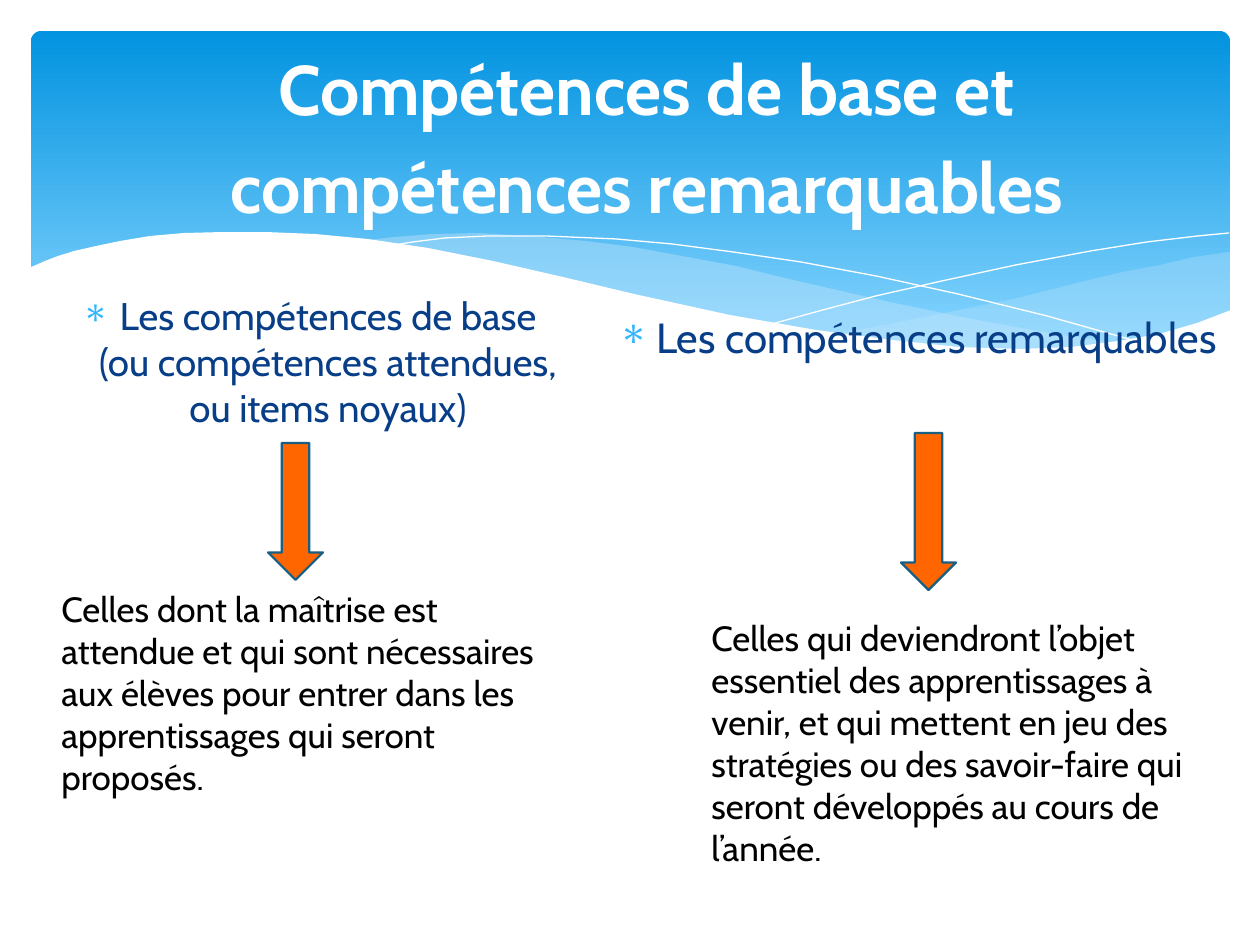
from dataclasses import dataclass
from typing import Optional

import pptx
import pptx.dml.color
import pptx.enum.shapes
import pptx.enum.text
import pptx.oxml.ns
import pptx.util
from lxml import etree

PX = 914400 / 126
FONT = "Cabin"
COLORS = {
    "sky": "0293E0", "pale": "83D3FE", "mist": "C6E7FC", "white": "FFFFFF",
    "navy": "073E87", "star": "31B6FD", "black": "000000",
    "orange": "FF6600", "edge": "195F84",
}
LEFT = pptx.enum.text.PP_ALIGN.LEFT
CENTER = pptx.enum.text.PP_ALIGN.CENTER


@dataclass
class Wave:
    points: list
    fill: Optional[str] = None
    alpha: int = 100


@dataclass
class Note:
    box: tuple
    lines: list
    size: int
    color: str
    align: int = LEFT
    bold: bool = False
    star: bool = False
    gap: float = 0


WAVES = [
    Wave([(1229, 252), (1194, 257), (1160, 265), (1123, 272), (1085, 281),
          (1014, 299), (949, 312), (890, 324), (833, 334), (871, 339),
          (922, 345), (969, 349), (1026, 350), (1076, 348), (1120, 343),
          (1160, 334), (1196, 324), (1230, 311), (1230, 252)], "mist", 29),
    Wave([(1125, 344), (1055, 334), (977, 320), (890, 302), (793, 280),
          (736, 266), (682, 256), (633, 247), (586, 241), (529, 236),
          (479, 233), (433, 234), (394, 237), (360, 241), (407, 247),
          (456, 256), (509, 266), (566, 280), (668, 302), (757, 321),
          (819, 333), (876, 340), (927, 347), (989, 350), (1043, 350),
          (1092, 348)], "mist", 40),
    Wave([(389, 246), (413, 242), (445, 238), (488, 236), (546, 236),
          (616, 239), (672, 244), (733, 252), (801, 262), (876, 276),
          (958, 294), (1047, 316), (1143, 343)]),
    Wave([(772, 324), (823, 310), (876, 296), (942, 281), (1016, 265),
          (1091, 251), (1147, 242), (1198, 236), (1229, 233)]),
    Wave([(1231, 310), (1197, 323), (1159, 334), (1118, 341), (1071, 347),
          (1019, 349), (959, 347), (892, 340), (816, 330), (730, 315),
          (634, 294), (563, 277), (493, 261), (428, 248), (368, 239),
          (315, 234), (266, 232), (223, 232), (184, 233), (150, 236),
          (120, 241), (96, 246), (74, 251), (58, 256), (45, 261),
          (29, 268), (29, 415), (1231, 415)], "white"),
]

ARROWS = [(268, 443, 55, 137), (901, 433, 55, 157)]

NOTES = [
    Note((44, 286, 530, 178),
         ["Les compétences de base (ou compétences attendues, ou items noyaux)"],
         22, "navy", CENTER, star=True, gap=4.4),
    Note((606, 305, 635, 98), ["Les compétences remarquables"],
         24, "navy", star=True, gap=4.8),
    Note((699, 610, 501, 305),
         ["Celles qui deviendront l’objet essentiel des apprentissages à venir, "
          "et qui mettent en jeu des stratégies ou des savoir-faire qui seront "
          "développés au cours de l’année."], 20, "black"),
    Note((49, 581, 541, 263),
         ["Celles dont la maîtrise est attendue et qui sont nécessaires aux "
          "élèves pour entrer dans les apprentissages qui seront proposés."],
         20, "black"),
    Note((77, 39, 1139, 217),
         ["Compétences de base et", "compétences remarquables"],
         40, "white", CENTER, bold=True, gap=8),
]


def px(n: float) -> int:
    return round(n * PX)


def rgb(name: str) -> pptx.dml.color.RGBColor:
    return pptx.dml.color.RGBColor.from_string(COLORS[name])


def tag(parent, name: str, **attrs):
    return etree.SubElement(parent, pptx.oxml.ns.qn(name), attrs)


def style(thing, values: dict) -> None:
    for key, value in values.items():
        setattr(thing, key, value)


def paint(shape, fill: Optional[str], line: Optional[str], width: float = 0) -> None:
    shape.shadow.inherit = False
    for part, color in ((shape.fill, fill), (shape.line.fill, line)):
        if color:
            part.solid()
            part.fore_color.rgb = rgb(color)
        else:
            part.background()
    if line:
        shape.line.width = pptx.util.Pt(width)


def draw_band(slide) -> None:
    kind = pptx.enum.shapes.MSO_SHAPE.ROUNDED_RECTANGLE
    band = slide.shapes.add_shape(kind, *map(px, (31, 31, 1199, 340)))
    band.adjustments[0] = 0.03
    paint(band, None, None)
    band.fill.gradient()
    band.fill.gradient_angle = 270
    stops = zip(band.fill.gradient_stops, ((0, "sky"), (0.9, "pale")))
    for stop, (place, color) in stops:
        stop.position = place
        stop.color.rgb = rgb(color)


def draw_wave(slide, wave: Wave) -> None:
    start, *rest = wave.points
    path = slide.shapes.build_freeform(*start, scale=PX)
    path.add_line_segments(rest, close=bool(wave.fill))
    shape = path.convert_to_shape()
    paint(shape, wave.fill, None if wave.fill else "white")
    if wave.alpha < 100:
        color = shape.fill._xPr.find(".//" + pptx.oxml.ns.qn("a:srgbClr"))
        tag(color, "a:alpha", val=str(wave.alpha * 1000))


def draw_arrow(slide, box: tuple) -> None:
    kind = pptx.enum.shapes.MSO_SHAPE.DOWN_ARROW
    paint(slide.shapes.add_shape(kind, *map(px, box)), "orange", "edge", 1.25)


def add_star(para) -> None:
    """Give the paragraph a hanging star bullet."""
    props = para._p.get_or_add_pPr()
    style_in = px(38)
    props.set("marL", str(style_in))
    props.set("indent", str(-style_in))
    tag(tag(props, "a:buClr"), "a:srgbClr", val=COLORS["star"])
    tag(props, "a:buChar", char="∗")


def draw_note(slide, note: Note) -> None:
    frame = slide.shapes.add_textbox(*map(px, note.box)).text_frame
    frame.word_wrap = True
    for i, line in enumerate(note.lines):
        para = frame.add_paragraph() if i else frame.paragraphs[0]
        style(para, {"alignment": note.align,
                     "space_before": pptx.util.Pt(note.gap)})
        if note.star:
            add_star(para)
        run = para.add_run()
        run.text = line
        style(run.font, {"name": FONT, "size": pptx.util.Pt(note.size),
                         "bold": note.bold})
        run.font.color.rgb = rgb(note.color)


def main() -> None:
    deck = pptx.Presentation()
    style(deck, {"slide_width": px(1260), "slide_height": px(945)})
    slide = deck.slides.add_slide(deck.slide_layouts[6])
    draw_band(slide)
    for draw, items in ((draw_wave, WAVES), (draw_arrow, ARROWS),
                        (draw_note, NOTES)):
        for item in items:
            draw(slide, item)
    deck.save("out.pptx")


if __name__ == "__main__":
    main()
